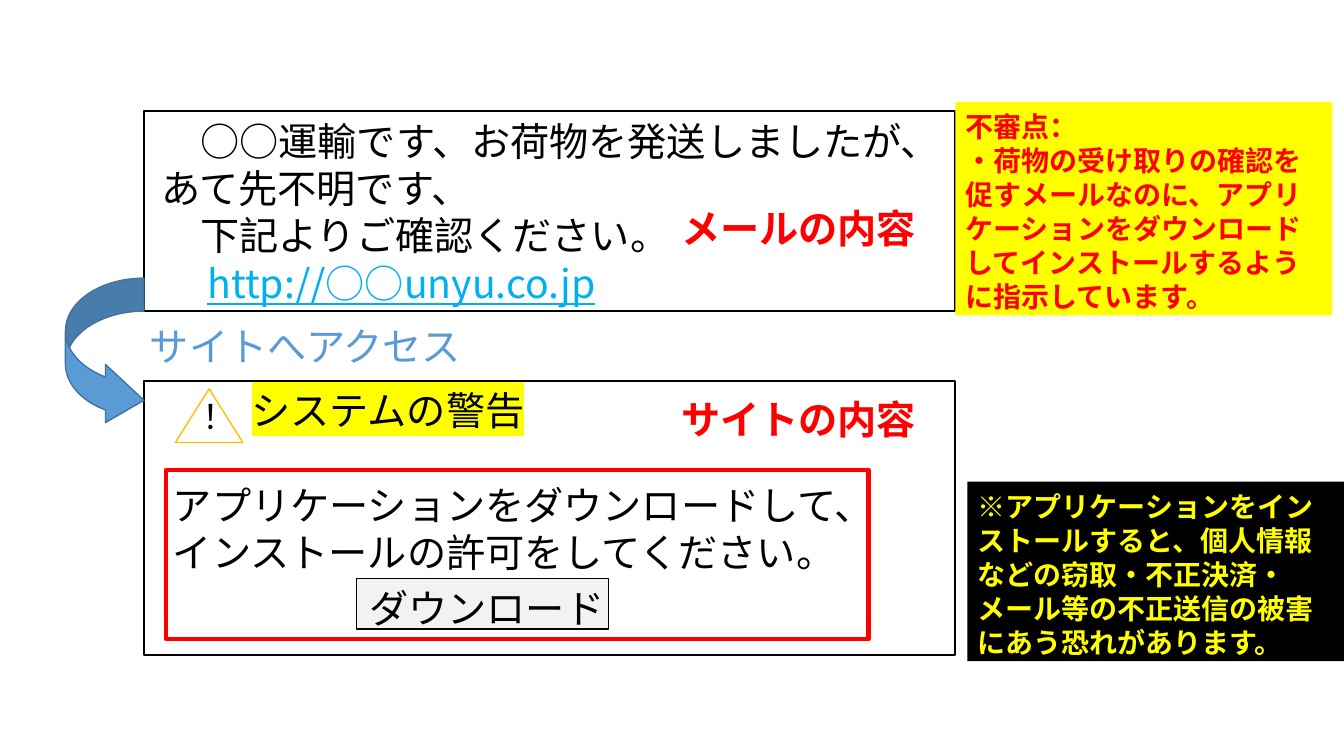
from lxml import etree
from pptx import Presentation
from pptx.dml.color import RGBColor
from pptx.enum.shapes import MSO_SHAPE
from pptx.enum.text import MSO_ANCHOR, PP_ALIGN
from pptx.oxml.ns import qn
from pptx.util import Cm, Pt

COLORS = {
    "black": "000000", "white": "FFFFFF", "red": "FF0000", "yellow": "FFFF00",
    "link": "00B0F0", "blue": "5B9BD5", "dark blue": "43739E",
    "amber": "FFC000", "button": "F2F2F2",
}
JAPANESE = "Noto Sans CJK JP"
EM = 0.99  # width of one 28 pt character in cm

presentation = Presentation()
presentation.slide_width, presentation.slide_height = Cm(33.87), Cm(19.05)
slide = presentation.slides.add_slide(presentation.slide_layouts[6])


def add_box(kind, left, top, width, height, fill=None, line=None, weight=1):
    shape = slide.shapes.add_shape(kind, Cm(left), Cm(top), Cm(width), Cm(height))
    shape.shadow.inherit = False
    if fill:
        shape.fill.solid()
        shape.fill.fore_color.rgb = RGBColor.from_string(COLORS[fill])
    else:
        shape.fill.background()
    if line:
        shape.line.color.rgb = RGBColor.from_string(COLORS[line])
        shape.line.width = Pt(weight)
    else:
        shape.line.fill.background()
    return shape


def write(shape, rows, size=28, bold=False, font_name=JAPANESE, spacing=None):
    """Each row is (text, color, indent in cm, space before in points)."""
    frame = shape.text_frame
    frame.word_wrap = True
    frame.vertical_anchor = MSO_ANCHOR.TOP
    frame.margin_top = Cm(0.13 + size * 0.003)
    frame.margin_right = Cm(0)
    for index, (text, color, indent, before) in enumerate(rows):
        paragraph = frame.paragraphs[0] if index == 0 else frame.add_paragraph()
        paragraph.add_run().text = text
        paragraph.alignment = PP_ALIGN.LEFT
        paragraph.line_spacing = Pt(spacing or round(size * 1.21, 1))
        paragraph.space_before = Pt(before)
        font = paragraph.font
        font.size, font.bold, font.name = Pt(size), bold, font_name
        font.color.rgb = RGBColor.from_string(COLORS[color])
        properties = paragraph._p.pPr
        properties.set("marL", str(Cm(indent)))
        properties.set("indent", "0")
        east_asian = etree.SubElement(properties.find(qn("a:defRPr")), qn("a:ea"))
        east_asian.set("typeface", font_name)
    return frame


# Download button
add_box(MSO_SHAPE.RECTANGLE, 8.99, 14.58, 6.35, 1.27, "button", "black")

# Mail text
mail = slide.shapes.add_textbox(Cm(2.82), Cm(2.72), Cm(21.26), Cm(5.05))
mail_frame = write(mail, [
    ("○○運輸です、お荷物を発送しましたが、", "black", 2 * EM, 0),
    ("あて先不明です、", "black", EM, 0),
    ("下記よりご確認ください。", "black", 2 * EM, 0),
    ("http://○○unyu.co.jp", "link", 2.16, 0),
])
mail_frame.paragraphs[3].font.underline = True

# Step between mail and site
access = slide.shapes.add_textbox(Cm(3.53), Cm(7.9), Cm(8.81), Cm(1.45))
write(access, [("サイトへアクセス", "blue", 0, 0)])

# Site text
site = slide.shapes.add_textbox(Cm(2.13), Cm(9.5), Cm(19.76), Cm(6.45))
site_frame = write(site, [
    ("システムの警告", "black", 4 * EM, 0),
    ("アプリケーションをダウンロードして、", "black", 2 * EM, 34),
    ("インストールの許可をしてください。", "black", 2 * EM, 0),
    ("ダウンロード", "black", 7 * EM, 6),
])
warning_run = site_frame.paragraphs[0].runs[0]
highlight = etree.SubElement(warning_run._r.get_or_add_rPr(), qn("a:highlight"))
etree.SubElement(highlight, qn("a:srgbClr")).set("val", COLORS["yellow"])

# Frames and their red labels
for label, top, height, label_top in [
    ("メールの内容", 2.79, 5.05, 4.93),
    ("サイトの内容", 9.6, 6.91, 9.75),
]:
    add_box(MSO_SHAPE.RECTANGLE, 3.63, top, 20.45, height, line="black", weight=1.5)
    label_box = slide.shapes.add_textbox(Cm(16.92), Cm(label_top), Cm(7.2), Cm(1.45))
    write(label_box, [(label, "red", 0, 0)], bold=True)

# Warning sign
sign = add_box(MSO_SHAPE.ISOSCELES_TRIANGLE, 4.42, 9.8, 1.7, 1.35, "white", "amber")
sign_frame = write(sign, [("！", "black", 0, 0)], 24, font_name="Calibri", spacing=10)
sign_frame.vertical_anchor = MSO_ANCHOR.MIDDLE
sign_frame.margin_top = Cm(0.13)
sign_frame.margin_right = Cm(0.25)
sign_frame.paragraphs[0].alignment = PP_ALIGN.CENTER

# Arrow from mail to site
arrow = add_box(MSO_SHAPE.CURVED_RIGHT_ARROW, 1.65, 7.01, 1.98, 3.81, "blue", "dark blue")
for index, value in enumerate([0.42, 0.74, 0.49]):
    arrow.adjustments[index] = value

# Suspicious points
suspicion = add_box(MSO_SHAPE.RECTANGLE, 24.08, 2.57, 9.5, 5.38, "yellow")
write(suspicion, [
    ("不審点：", "red", 0, 0),
    ("・荷物の受け取りの確認を促すメールなのに、アプリケーションをダウンロード"
     "してインストールするように指示しています。", "red", 0, 0),
], 20, bold=True).margin_right = Cm(0.25)

# Red frame around the download request
add_box(MSO_SHAPE.RECTANGLE, 4.19, 11.84, 17.7, 4.27, line="red", weight=3)

# Possible damage
damage = add_box(MSO_SHAPE.RECTANGLE, 24.38, 12.14, 9.49, 4.52, "black")
write(damage, [
    ("※アプリケーションをインストールすると、個人情報などの窃取・不正決済・"
     "メール等の不正送信の被害にあう恐れがあります。", "yellow", 0, 0),
], 20, bold=True).margin_right = Cm(0.25)

presentation.save("out.pptx")
